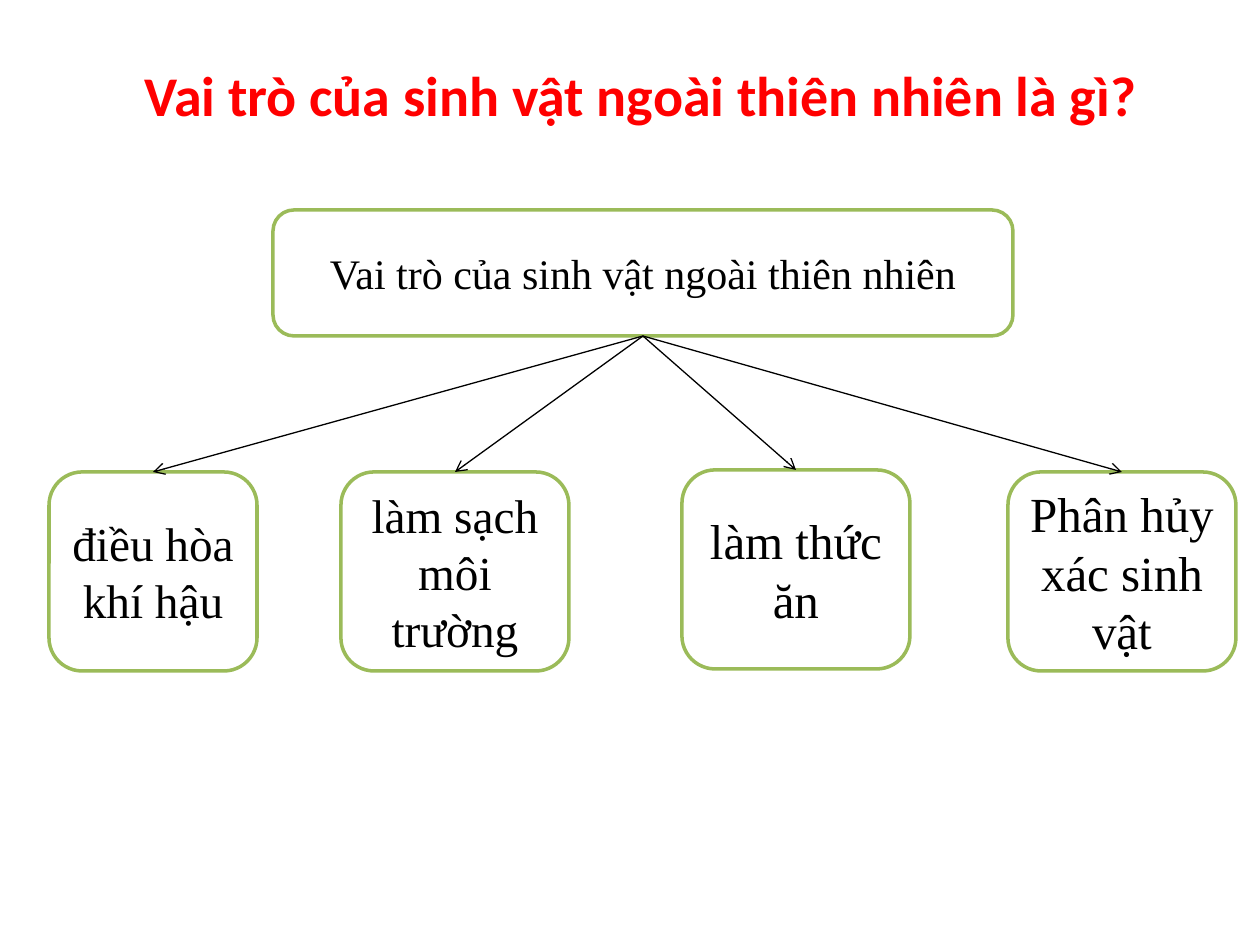
from lxml.etree import SubElement
from pptx import Presentation
from pptx.dml.color import RGBColor
from pptx.enum.shapes import MSO_CONNECTOR, MSO_SHAPE
from pptx.enum.text import MSO_ANCHOR, PP_ALIGN
from pptx.oxml.ns import qn
from pptx.util import Emu, Pt

PX = 914400 // 126
RED = RGBColor(0xFF, 0x00, 0x00)
GREEN = RGBColor(0x9B, 0xBB, 0x59)
BLACK = RGBColor(0x00, 0x00, 0x00)
WHITE = RGBColor(0xFF, 0xFF, 0xFF)

TITLE_FORMAT = {"name": "Calibri", "size": Pt(32), "bold": True}
BOX_FORMAT = {"name": "Times New Roman", "bold": False}


def write_text(shape, text, color, font_format):
    """Put one centred paragraph in the middle of a shape."""
    frame = shape.text_frame
    frame.word_wrap = True
    frame.vertical_anchor = MSO_ANCHOR.MIDDLE
    paragraph = frame.paragraphs[0]
    paragraph.alignment = PP_ALIGN.CENTER
    run = paragraph.add_run()
    run.text = text
    run.font.color.rgb = color
    for name, value in font_format.items():
        setattr(run.font, name, value)


def add_box(slide, bounds, text, size):
    box = slide.shapes.add_shape(
        MSO_SHAPE.ROUNDED_RECTANGLE, *[Emu(value * PX) for value in bounds])
    box.shadow.inherit = False
    box.fill.solid()
    box.fill.fore_color.rgb = WHITE
    box.line.color.rgb = GREEN
    box.line.width = Pt(2)
    write_text(box, text, BLACK, {**BOX_FORMAT, "size": Pt(size)})
    return box


presentation = Presentation()
presentation.slide_width = Emu(1260 * PX)
presentation.slide_height = Emu(945 * PX)
slide = presentation.slides.add_slide(presentation.slide_layouts[5])

title = slide.shapes.title
title.left, title.top, title.width, title.height = [
    Emu(value * PX) for value in (53, 42, 1176, 105)]
write_text(title, "Vai trò của sinh vật ngoài thiên nhiên là gì?", RED, TITLE_FORMAT)

root = add_box(slide, (273, 210, 740, 126), "Vai trò của sinh vật ngoài thiên nhiên", 24)

# left, top, width, text, font size
roles = [
    (49, 472, 208, "điều hòa khí hậu", 27),
    (341, 472, 228, "làm sạch môi trường", 27),
    (682, 470, 228, "làm thức ăn", 28),
    (1008, 472, 228, "Phân hủy xác sinh vật", 28),
]
for left, top, width, text, size in roles:
    role = add_box(slide, (left, top, width, 199), text, size)
    arrow = slide.shapes.add_connector(MSO_CONNECTOR.STRAIGHT, 0, 0, 0, 0)
    arrow.begin_connect(root, 2)
    arrow.end_connect(role, 0)
    arrow.line.color.rgb = BLACK
    arrow.line.width = Pt(0.75)
    SubElement(arrow.line._get_or_add_ln(), qn("a:tailEnd"), type="arrow")
    SubElement(arrow._element.spPr, qn("a:effectLst"))

presentation.save("out.pptx")
